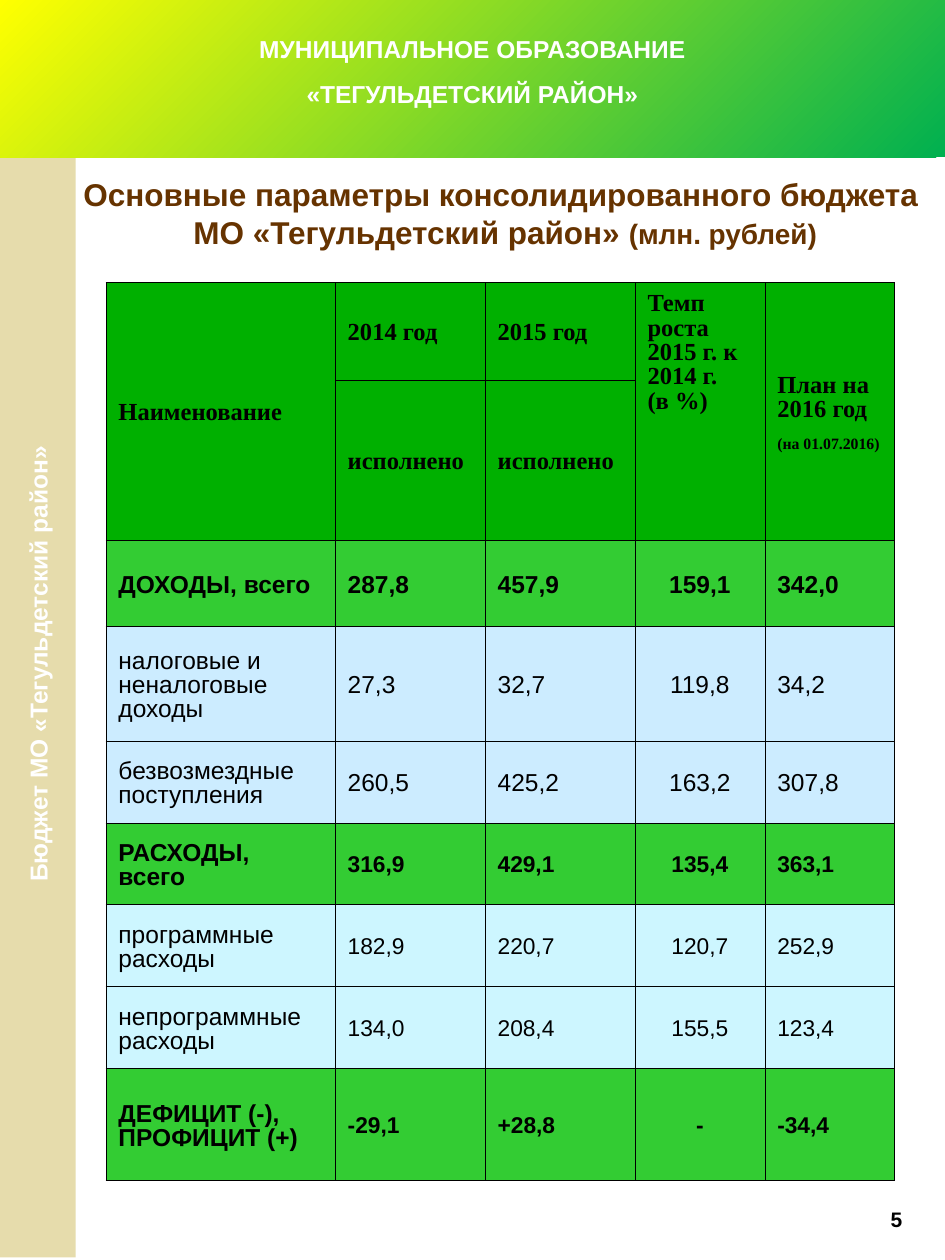
from lxml import etree
from pptx import Presentation
from pptx import util as u
from pptx.dml.color import RGBColor
from pptx.enum import shapes, text
from pptx.oxml.ns import qn

CELL = 0.1  # inch per step of a 75 by 100 grid
HUES = {"white": "FFFFFF", "black": "000000", "sand": "E6DCAC", "brown": "663300",
        "leaf": "00B050", "sun": "FFFF00", "head": "00B000", "total": "33CC33",
        "income": "CCECFF", "spend": "CDF6FF"}
COLS = (18.2, 11.9, 11.9, 10.3, 10.3)
ROWS = (7.8, 12.7, 6.8, 9.1, 6.5, 6.5, 6.5, 6.5, 8.9)
HEAD = (("Наименование", "2014 год", "2015 год",
         "Темп роста 2015 г. к 2014 г.", "План на 2016 год"),
        ("", "исполнено", "исполнено", "", ""))
BODY = (("total", 14, "ДОХОДЫ, всего", "287,8", "457,9", "159,1", "342,0"),
        ("income", 14, "налоговые и неналоговые доходы", "27,3", "32,7", "119,8", "34,2"),
        ("income", 14, "безвозмездные поступления", "260,5", "425,2", "163,2", "307,8"),
        ("total", 13, "РАСХОДЫ, всего", "316,9", "429,1", "135,4", "363,1"),
        ("spend", 13, "программные расходы", "182,9", "220,7", "120,7", "252,9"),
        ("spend", 13, "непрограммные расходы", "134,0", "208,4", "155,5", "123,4"),
        ("total", 13, "ДЕФИЦИТ (-), ПРОФИЦИТ (+)", "-29,1", "+28,8", "-", "-34,4"))


def grid(*steps):
    """Turn grid steps into lengths."""
    return [u.Inches(s * CELL) for s in steps]


def hue(name):
    """Return a named colour."""
    return RGBColor.from_string(HUES[name])


def run(para, words, size, tint="black", bold=True, face="Arial"):
    """Add one styled run."""
    r = para.add_run()
    r.text = words
    r.font.size, r.font.bold, r.font.name = u.Pt(size), bold, face
    r.font.color.rgb = hue(tint)


def line(frame, first=True, mid=True, gap=0, lead=None):
    """Return the first or a further paragraph, aligned and spaced."""
    para = frame.paragraphs[0] if first else frame.add_paragraph()
    para.alignment = text.PP_ALIGN.CENTER if mid else text.PP_ALIGN.LEFT
    para.space_before = u.Pt(gap)
    if lead:
        para.line_spacing = lead
    return para


def box(slide, *place):
    """Add a wrapped text box and return its frame."""
    frame = slide.shapes.add_textbox(*grid(*place)).text_frame
    frame.word_wrap = True
    return frame


def block(slide, *place):
    """Add a plain rectangle without line or shadow."""
    rect = slide.shapes.add_shape(shapes.MSO_SHAPE.RECTANGLE, *grid(*place))
    rect.shadow.inherit = False
    rect.line.fill.background()
    return rect


def side(slide):
    """Draw the upright band on the left."""
    band = block(slide, -42, 51.8, 90, 6)
    band.rotation = 270
    band.fill.solid()
    band.fill.fore_color.rgb = hue("sand")
    band.text_frame.margin_left = u.Inches(0.52)
    run(line(band.text_frame), "Бюджет МО «Тегульдетский район»", 14, "white")


def banner(slide):
    """Draw the gradient banner at the top."""
    band = block(slide, 0, 0, 75, 12.5)
    band.fill.gradient()
    band.fill.gradient_angle = 135
    for stop, name in zip(band.fill.gradient_stops, ("leaf", "sun")):
        stop.color.rgb = hue(name)
    frame = band.text_frame
    frame.vertical_anchor = text.MSO_ANCHOR.TOP
    frame.margin_top = u.Inches(0.27)
    run(line(frame), "МУНИЦИПАЛЬНОЕ ОБРАЗОВАНИЕ", 14, "white")
    run(line(frame, False, gap=9), "«ТЕГУЛЬДЕТСКИЙ РАЙОН»", 14, "white")


def title(slide):
    """Write the heading."""
    frame = box(slide, 5.2, 13.4, 69.8, 7)
    run(line(frame), "Основные параметры консолидированного бюджета ", 18, "brown")
    para = line(frame, False)
    run(para, "МО «Тегульдетский район» ", 18, "brown")
    run(para, "(млн. рублей)", 16, "brown")


def edge(cell):
    """Give a cell thin black borders, placed ahead of its fill."""
    props = cell._tc.get_or_add_tcPr()
    for i, tag in enumerate(("a:lnL", "a:lnR", "a:lnT", "a:lnB")):
        rule = etree.Element(qn(tag), w=str(u.Pt(0.23)))
        fill = etree.SubElement(rule, qn("a:solidFill"))
        etree.SubElement(fill, qn("a:srgbClr"), val=HUES["black"])
        props.insert(i, rule)


def paint(cell, tint, top):
    """Set the fill, borders, inset and anchor of a cell."""
    cell.fill.solid()
    cell.fill.fore_color.rgb = hue(tint)
    edge(cell)
    cell.margin_top = u.Inches(top)
    cell.vertical_anchor = text.MSO_ANCHOR.MIDDLE


def heads(table):
    """Fill the two header rows."""
    for col in (0, 3, 4):
        table.cell(0, col).merge(table.cell(1, col))
    for i, words in enumerate(HEAD):
        for j, word in enumerate(words):
            cell = table.cell(i, j)
            paint(cell, "head", 0.08)
            if word:
                run(line(cell.text_frame, mid=False, lead=0.9), word, 14,
                    face="Times New Roman")
    for col, word, size, gap in ((3, "(в %)", 14, 0), (4, "(на 01.07.2016)", 9, 8.3)):
        para = line(table.cell(0, col).text_frame, False, False, gap, 0.9)
        run(para, word, size, face="Times New Roman")
    table.cell(0, 3).vertical_anchor = text.MSO_ANCHOR.TOP


def rows(table):
    """Fill the rows of figures."""
    for i, (tint, size, *words) in enumerate(BODY, len(HEAD)):
        for j, word in enumerate(words):
            cell = table.cell(i, j)
            paint(cell, tint, 0.09)
            para = line(cell.text_frame, mid=j == 3, lead=0.87)
            run(para, word, size if j else 14, bold=tint == "total")


def budget(slide):
    """Build the budget table."""
    place = grid(8.4, 22.4, sum(COLS), sum(ROWS))
    table = slide.shapes.add_table(len(ROWS), len(COLS), *place).table
    table.first_row = table.horz_banding = False
    for col, wide in zip(table.columns, grid(*COLS)):
        col.width = wide
    for row, high in zip(table.rows, grid(*ROWS)):
        row.height = high
    heads(table)
    rows(table)


def main():
    """Build and save the slide."""
    deck = Presentation()
    deck.slide_width, deck.slide_height = grid(75, 100)
    slide = deck.slides.add_slide(deck.slide_layouts[6])
    side(slide)
    title(slide)
    run(line(box(slide, 69, 95.3, 4.3, 3)), "5", 12)
    banner(slide)
    budget(slide)
    deck.save("out.pptx")


if __name__ == "__main__":
    main()
